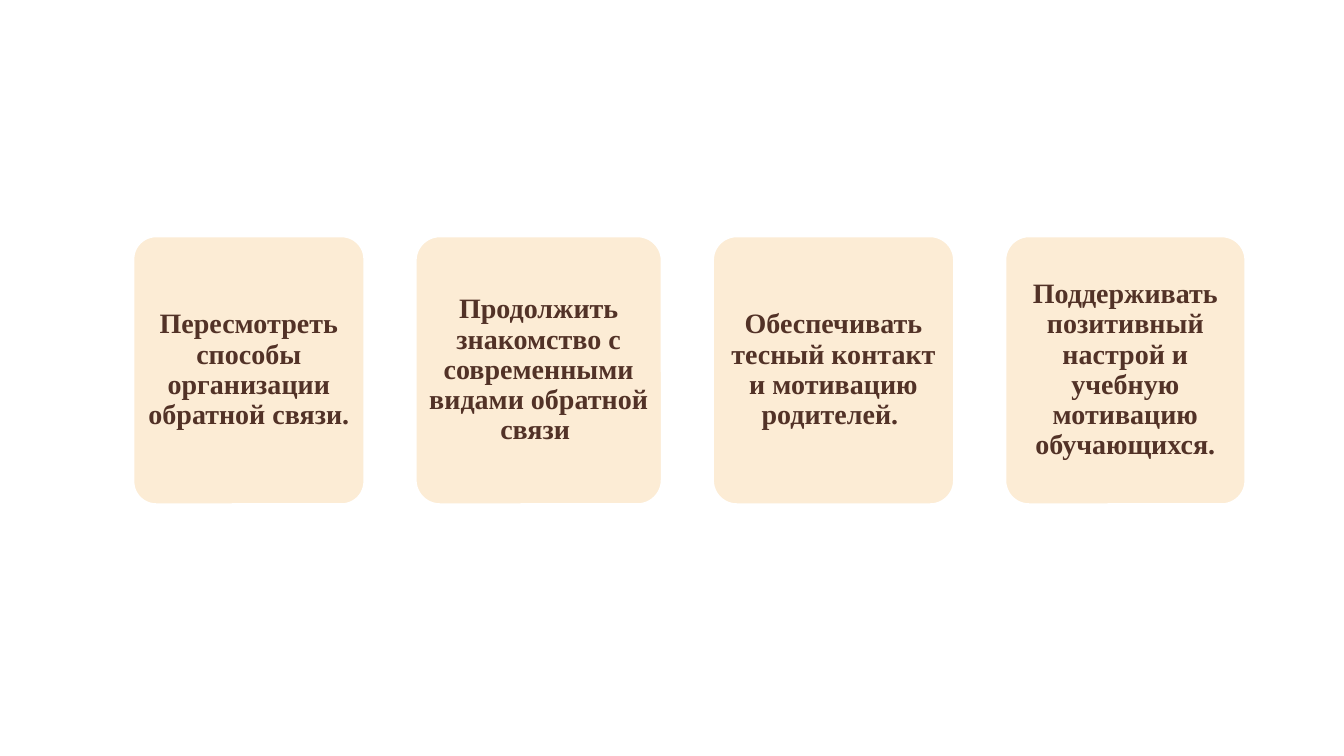
from pptx import Presentation
from pptx.dml.color import RGBColor
from pptx.enum.shapes import MSO_SHAPE
from pptx.enum.text import MSO_ANCHOR, PP_ALIGN
from pptx.util import Pt

ROUNDED = MSO_SHAPE.ROUNDED_RECTANGLE
MIDDLE = MSO_ANCHOR.MIDDLE
CENTER = PP_ALIGN.CENTER

COLORS = {"card": "FCECD5", "border": "FFFFFF", "text": "523227"}
FRAME_FORMAT = {
    "word_wrap": True, "vertical_anchor": MIDDLE,
    "margin_left": Pt(3), "margin_right": Pt(3),
    "margin_top": Pt(2.4), "margin_bottom": Pt(2.4),
}
PARAGRAPH_FORMAT = {"alignment": CENTER, "line_spacing": 0.9, "space_after": Pt(7)}
FONT_FORMAT = {"name": "Times New Roman", "size": Pt(20), "bold": True}

CARD_GAP = 36
# Width in points and text of each recommendation
RECOMMENDATIONS = [
    (165.6, "Пересмотреть способы организации обратной связи."),
    (176.4, "Продолжить знакомство с современными видами обратной связи "),
    (172.8, "Обеспечивать тесный контакт и мотивацию родителей. "),
    (172.1, "Поддерживать позитивный настрой и учебную мотивацию обучающихся."),
]


def color(name):
    return RGBColor.from_string(COLORS[name])


def apply_format(target, values):
    for name, value in values.items():
        setattr(target, name, value)


def add_card(slide, left, top, width, height, text):
    card = slide.shapes.add_shape(ROUNDED, Pt(left), Pt(top), Pt(width), Pt(height))
    card.adjustments[0] = 0.1
    card.shadow.inherit = False
    card.fill.solid()
    card.fill.fore_color.rgb = color("card")
    card.line.color.rgb = color("border")
    card.line.width = Pt(2)
    apply_format(card.text_frame, FRAME_FORMAT)
    paragraph = card.text_frame.paragraphs[0]
    apply_format(paragraph, PARAGRAPH_FORMAT)
    run = paragraph.add_run()
    run.text = text
    apply_format(run.font, FONT_FORMAT)
    run.font.color.rgb = color("text")


def add_card_row(slide, left, top, height):
    for width, text in RECOMMENDATIONS:
        add_card(slide, left, top, width, height, text)
        left += width + CARD_GAP


def main():
    presentation = Presentation()
    presentation.slide_width = Pt(960)
    presentation.slide_height = Pt(540)
    slide = presentation.slides.add_slide(presentation.slide_layouts[6])
    add_card_row(slide, left=95, top=168.5, height=192)
    presentation.save("out.pptx")


if __name__ == "__main__":
    main()
